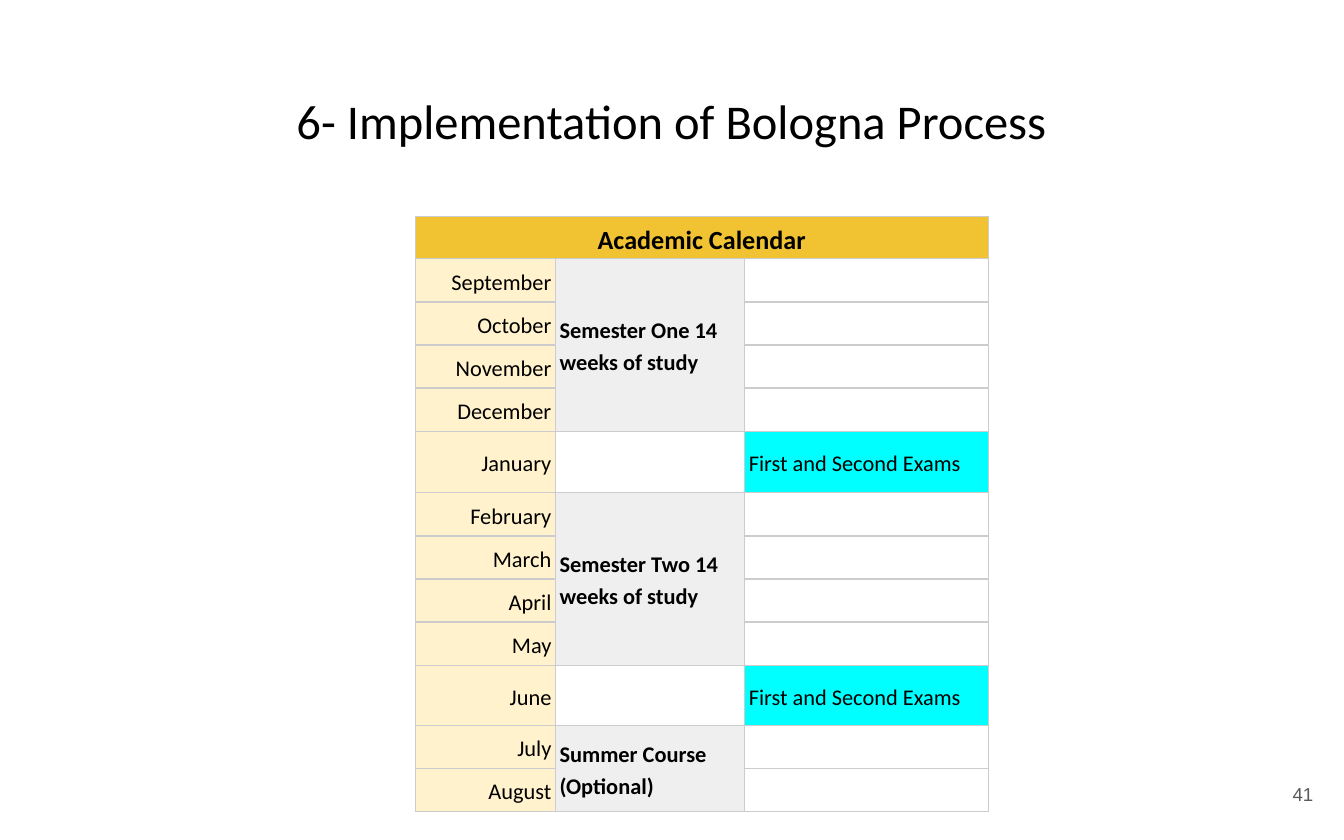
import lxml.etree
import pptx
import pptx.dml.color
import pptx.enum.text
import pptx.oxml.ns
import pptx.util

Pt = pptx.util.Pt
RGB = pptx.dml.color.RGBColor
ALIGN = pptx.enum.text.PP_ALIGN
MIDDLE = pptx.enum.text.MSO_ANCHOR.MIDDLE
qn = pptx.oxml.ns.qn

BLACK = RGB(0x00, 0x00, 0x00)
GRAY = RGB(0x59, 0x59, 0x59)
BORDER = RGB(0xCC, 0xCC, 0xCC)
GOLD = RGB(0xF1, 0xC2, 0x32)
CREAM = RGB(0xFF, 0xF2, 0xCC)
SILVER = RGB(0xEF, 0xEF, 0xEF)
CYAN = RGB(0x00, 0xFF, 0xFF)

MONTHS = ["September", "October", "November", "December", "January", "February",
          "March", "April", "May", "June", "July", "August"]
PERIODS = [(1, 4, "Semester One 14 weeks of study"),
           (6, 9, "Semester Two 14 weeks of study"),
           (11, 12, "Summer Course (Optional)")]
EXAM_ROWS = (5, 10)


def write(tf, text, size=12, color=BLACK, bold=False, font="Calibri",
          align=ALIGN.LEFT, spacing=None):
    p = tf.paragraphs[0]
    p.alignment = align
    p.line_spacing = spacing
    r = p.add_run()
    r.text = text
    r.font.name = font
    r.font.size = Pt(size)
    r.font.bold = bold
    r.font.color.rgb = color


class Deck:
    margin = 7.2
    cell_margins = (2.16, 1.44)
    border_width = 0.75

    def __init__(self, width, height):
        self.prs = pptx.Presentation()
        self.prs.slide_width = Pt(width)
        self.prs.slide_height = Pt(height)

    def add_slide(self):
        self.s = self.prs.slides.add_slide(self.prs.slide_layouts[5])

    def frame(self, sp):
        tf = sp.text_frame
        tf.word_wrap = True
        tf.vertical_anchor = MIDDLE
        tf.margin_left = tf.margin_right = Pt(self.margin)
        tf.margin_top = tf.margin_bottom = Pt(self.margin)
        return tf

    def title(self, text, x, y, w, h):
        sp = self.s.shapes.title
        sp.left, sp.top, sp.width, sp.height = Pt(x), Pt(y), Pt(w), Pt(h)
        write(self.frame(sp), text, size=26, align=ALIGN.CENTER)

    def text(self, text, x, y, w, h, **style):
        sp = self.s.shapes.add_textbox(Pt(x), Pt(y), Pt(w), Pt(h))
        write(self.frame(sp), text, **style)

    def table(self, x, y, cols, rows):
        sp = self.s.shapes.add_table(len(rows), len(cols), Pt(x), Pt(y),
                                     Pt(sum(cols)), Pt(sum(rows)))
        table = sp.table
        table.first_row = table.horz_banding = False
        for column, width in zip(table.columns, cols):
            column.width = Pt(width)
        for row, height in zip(table.rows, rows):
            row.height = Pt(height)
        for cell in (c for row in table.rows for c in row.cells):
            cell.margin_left = cell.margin_right = 0
            cell.margin_top = cell.margin_bottom = 0
            self.borders(cell)
            cell.fill.background()
        return table

    def borders(self, cell):
        tc_pr = cell._tc.get_or_add_tcPr()
        for side in ("a:lnL", "a:lnR", "a:lnT", "a:lnB"):
            ln = lxml.etree.SubElement(tc_pr, qn(side), w=str(Pt(self.border_width)))
            fill = lxml.etree.SubElement(ln, qn("a:solidFill"))
            lxml.etree.SubElement(fill, qn("a:srgbClr"), val=str(BORDER))

    def cell(self, cell, text, fill, **style):
        across, down = self.cell_margins
        cell.margin_left = cell.margin_right = Pt(across)
        cell.margin_top = cell.margin_bottom = Pt(down)
        cell.vertical_anchor = MIDDLE
        cell.fill.solid()
        cell.fill.fore_color.rgb = fill
        write(cell.text_frame, text, spacing=1.15, **style)


def main():
    deck = Deck(720, 450)
    deck.add_slide()
    deck.title("6- Implementation of Bologna Process", 24.5, 39, 671, 50.4)

    heights = [22.7] + [23.1] * len(MONTHS)
    heights[5], heights[10] = 33.1, 32.4
    calendar = deck.table(222.6, 116, [75, 101.4, 130.4], heights)

    calendar.cell(0, 0).merge(calendar.cell(0, 2))
    deck.cell(calendar.cell(0, 0), "Academic Calendar", GOLD, size=14, bold=True,
              align=ALIGN.CENTER)
    for row, month in enumerate(MONTHS, 1):
        deck.cell(calendar.cell(row, 0), month, CREAM, align=ALIGN.RIGHT)
    for first, last, period in PERIODS:
        calendar.cell(first, 1).merge(calendar.cell(last, 1))
        deck.cell(calendar.cell(first, 1), period, SILVER, bold=True)
    for row in EXAM_ROWS:
        deck.cell(calendar.cell(row, 2), "First and Second Exams", CYAN)

    deck.text("41", 667.4, 408.2, 43.2, 34.6, size=10, color=GRAY, font="Arial",
              align=ALIGN.RIGHT)
    deck.prs.save("out.pptx")


if __name__ == "__main__":
    main()
